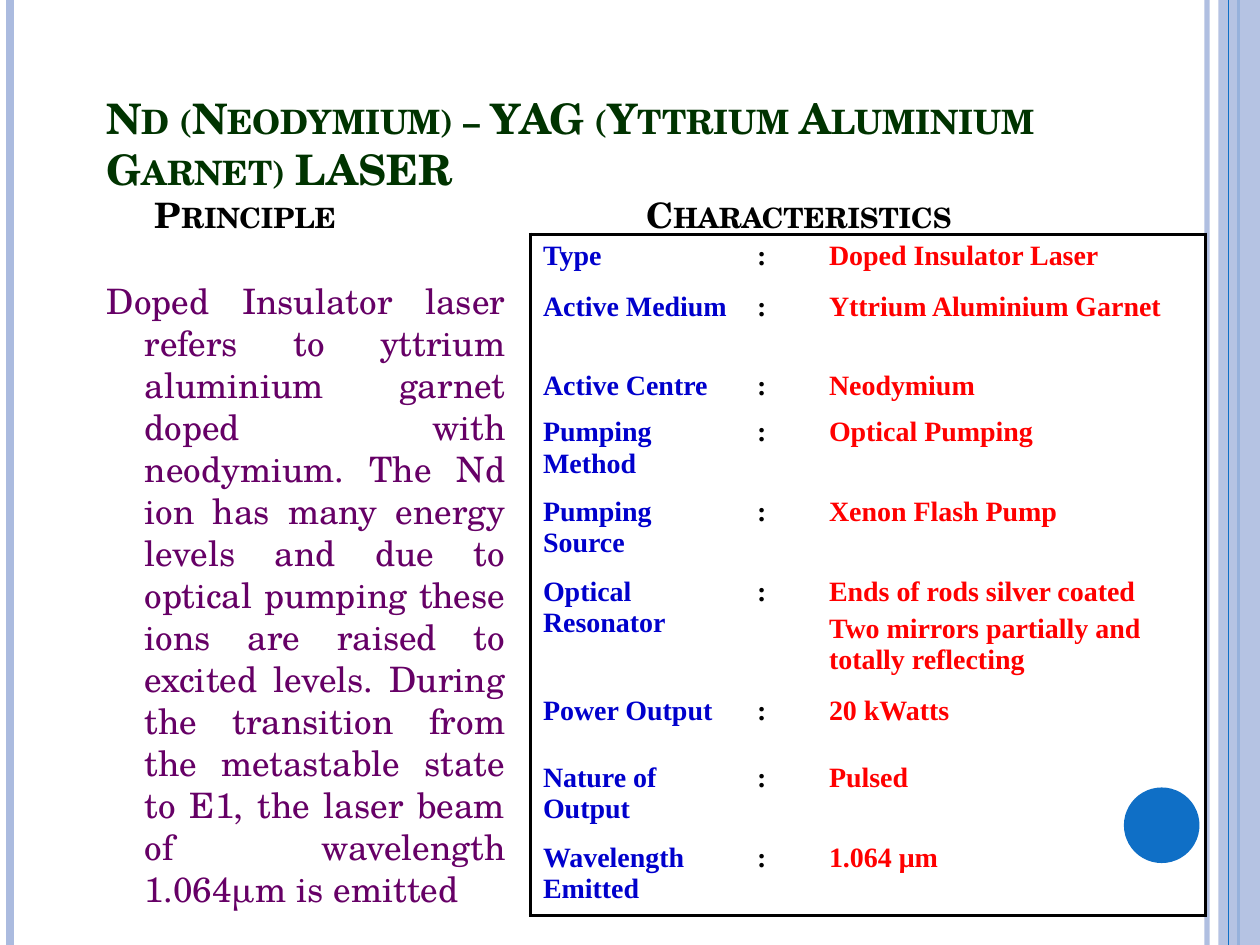
from lxml.etree import SubElement
from pptx import Presentation
from pptx.dml.color import RGBColor
from pptx.enum.shapes import MSO_CONNECTOR, MSO_SHAPE
from pptx.enum.text import MSO_ANCHOR, PP_ALIGN
from pptx.oxml.ns import qn
from pptx.util import Inches, Pt

THEME = {
    "pale": "ABBBDF", "accent": "0F6FC6", "black": "000000",
    "heading": {"name": "TeX Gyre Schola", "size": Pt(24), "color": "003300", "bold": True},
    "subheading": {"name": "TeX Gyre Schola", "size": Pt(20), "color": "000000", "bold": True},
    "body": {"name": "TeX Gyre Schola", "size": Pt(20), "color": "660066", "bold": False},
    "cell": {"name": "Times New Roman", "size": Pt(16), "bold": True},
    "columns": ("0000CC", "000000", "FF0000"),
}

TITLE = "Nd (Neodymium) – YAG (Yttrium Aluminium Garnet) LASER"
SUBHEADINGS = ("Principle", "Characteristics")
SUBHEADING_TABS = (0.38, 4.28)
PRINCIPLE = (
    "Doped Insulator laser refers to yttrium aluminium garnet doped with neodymium. "
    "The Nd ion has many energy levels and due to optical pumping these ions are raised "
    "to excited levels. During the transition from the metastable state to E1, "
    "the laser beam of wavelength 1.064μm is emitted"
)
CHARACTERISTICS = [
    ("Type", ["Doped Insulator Laser"], 0.4),
    ("Active Medium", ["Yttrium Aluminium Garnet"], 0.63),
    ("Active Centre", ["Neodymium"], 0.37),
    ("Pumping Method", ["Optical Pumping"], 0.53),
    ("Pumping Source", ["Xenon Flash Pump"], 0.53),
    ("Optical Resonator", ["Ends of rods silver coated",
                           "Two mirrors partially and totally reflecting"], 0.7),
    ("Power Output", ["20 kWatts"], 0.53),
    ("Nature of Output", ["Pulsed"], 0.53),
    ("Wavelength Emitted", ["1.064 μm"], 0.53),
]
COLUMN_WIDTHS = (1.7, 0.57, 3.09)
NO_STYLE = "{2D5ABB26-0587-4C30-8999-92F81FD0307C}"


def set_attributes(target, values):
    for name, value in values.items():
        setattr(target, name, value)


def set_alpha(element, percent):
    color = next(element.iter(qn("a:srgbClr")))
    SubElement(color, qn("a:alpha"), val=str(percent * 1000))


def add_rule(slide, x, color, width, alpha=100):
    rule = slide.shapes.add_connector(
        MSO_CONNECTOR.STRAIGHT, Inches(x), 0, Inches(x), Inches(7.5))
    rule.line.color.rgb = RGBColor.from_string(color)
    rule.line.width = Pt(width)
    if alpha < 100:
        set_alpha(rule.line._get_or_add_ln(), alpha)
    SubElement(rule._element.spPr, qn("a:effectLst"))


def add_panel(slide, kind, box, color, alpha=100):
    panel = slide.shapes.add_shape(kind, *map(Inches, box))
    panel.shadow.inherit = False
    panel.fill.solid()
    panel.fill.fore_color.rgb = RGBColor.from_string(color)
    panel.line.fill.background()
    if alpha < 100:
        set_alpha(panel._element.spPr, alpha)


def add_text_box(slide, box, anchor):
    frame = slide.shapes.add_textbox(*map(Inches, box)).text_frame
    set_attributes(frame, {"word_wrap": True, "vertical_anchor": anchor})
    return frame


def write(paragraph, text, style, color=None, small_caps=False):
    run = paragraph.add_run()
    run.text = text
    set_attributes(run.font, {key: style[key] for key in ("name", "size", "bold")})
    run.font.color.rgb = RGBColor.from_string(color or style["color"])
    if small_caps:
        run.font._element.set("cap", "small")


def add_decoration(slide):
    add_rule(slide, 9.58, THEME["pale"], 3, 93)
    add_rule(slide, 0.08, THEME["pale"], 4.5)
    add_rule(slide, 9.83, THEME["accent"], 1.5)
    add_panel(slide, MSO_SHAPE.RECTANGLE, (9.67, 0, 0.33, 7.5), THEME["pale"], 87)
    add_rule(slide, 9.75, THEME["accent"], 0.75)
    add_panel(slide, MSO_SHAPE.OVAL, (8.92, 6.25, 0.6, 0.6), THEME["accent"])


def add_title(slide):
    frame = add_text_box(slide, (0.75, 0.67, 8.5, 1.25), MSO_ANCHOR.BOTTOM)
    write(frame.paragraphs[0], TITLE, THEME["heading"], small_caps=True)
    paragraph = frame.add_paragraph()
    tab_list = SubElement(paragraph._p.get_or_add_pPr(), qn("a:tabLst"))
    for position, text in zip(SUBHEADING_TABS, SUBHEADINGS):
        SubElement(tab_list, qn("a:tab"), pos=str(Inches(position)), algn="l")
        write(paragraph, "\t" + text, THEME["subheading"], small_caps=True)


def add_principle(slide):
    frame = add_text_box(slide, (0.75, 2.17, 3.36, 3.68), MSO_ANCHOR.TOP)
    paragraph = frame.paragraphs[0]
    set_attributes(paragraph, {"alignment": PP_ALIGN.JUSTIFY, "space_before": Pt(6)})
    properties = paragraph._p.get_or_add_pPr()
    properties.set("marL", str(Inches(0.3)))
    properties.set("indent", str(Inches(-0.3)))
    write(paragraph, PRINCIPLE, THEME["body"])


def add_border(cell, side):
    line = SubElement(cell._tc.get_or_add_tcPr(), qn("a:ln" + side), w=str(Pt(2.25)))
    SubElement(SubElement(line, qn("a:solidFill")), qn("a:srgbClr"), val=THEME["black"])


def add_characteristics(slide):
    heights = [height for _, _, height in CHARACTERISTICS]
    box = (4.21, 1.86, sum(COLUMN_WIDTHS), sum(heights))
    table = slide.shapes.add_table(
        len(heights), len(COLUMN_WIDTHS), *map(Inches, box)).table
    set_attributes(table, {"first_row": False, "horz_banding": False})
    table._tbl.tblPr.find(qn("a:tableStyleId")).text = NO_STYLE
    for column, width in zip(table.columns, COLUMN_WIDTHS):
        column.width = Inches(width)
    last_row, last_column = len(heights) - 1, len(COLUMN_WIDTHS) - 1
    for row, (label, values, height) in enumerate(CHARACTERISTICS):
        table.rows[row].height = Inches(height)
        for column, lines in enumerate(([label], [":"], values)):
            cell = table.cell(row, column)
            edges = {"L": column == 0, "R": column == last_column,
                     "T": row == 0, "B": row == last_row}
            for side, on_edge in edges.items():
                if on_edge:
                    add_border(cell, side)
            cell.fill.background()
            for index, text in enumerate(lines):
                frame = cell.text_frame
                paragraph = frame.add_paragraph() if index else frame.paragraphs[0]
                paragraph.space_before = Pt(3.2)
                write(paragraph, text, THEME["cell"], THEME["columns"][column])


def main():
    presentation = Presentation()
    set_attributes(presentation, {"slide_width": Inches(10), "slide_height": Inches(7.5)})
    slide = presentation.slides.add_slide(presentation.slide_layouts[6])
    add_decoration(slide)
    add_title(slide)
    add_principle(slide)
    add_characteristics(slide)
    presentation.save("out.pptx")


if __name__ == "__main__":
    main()
